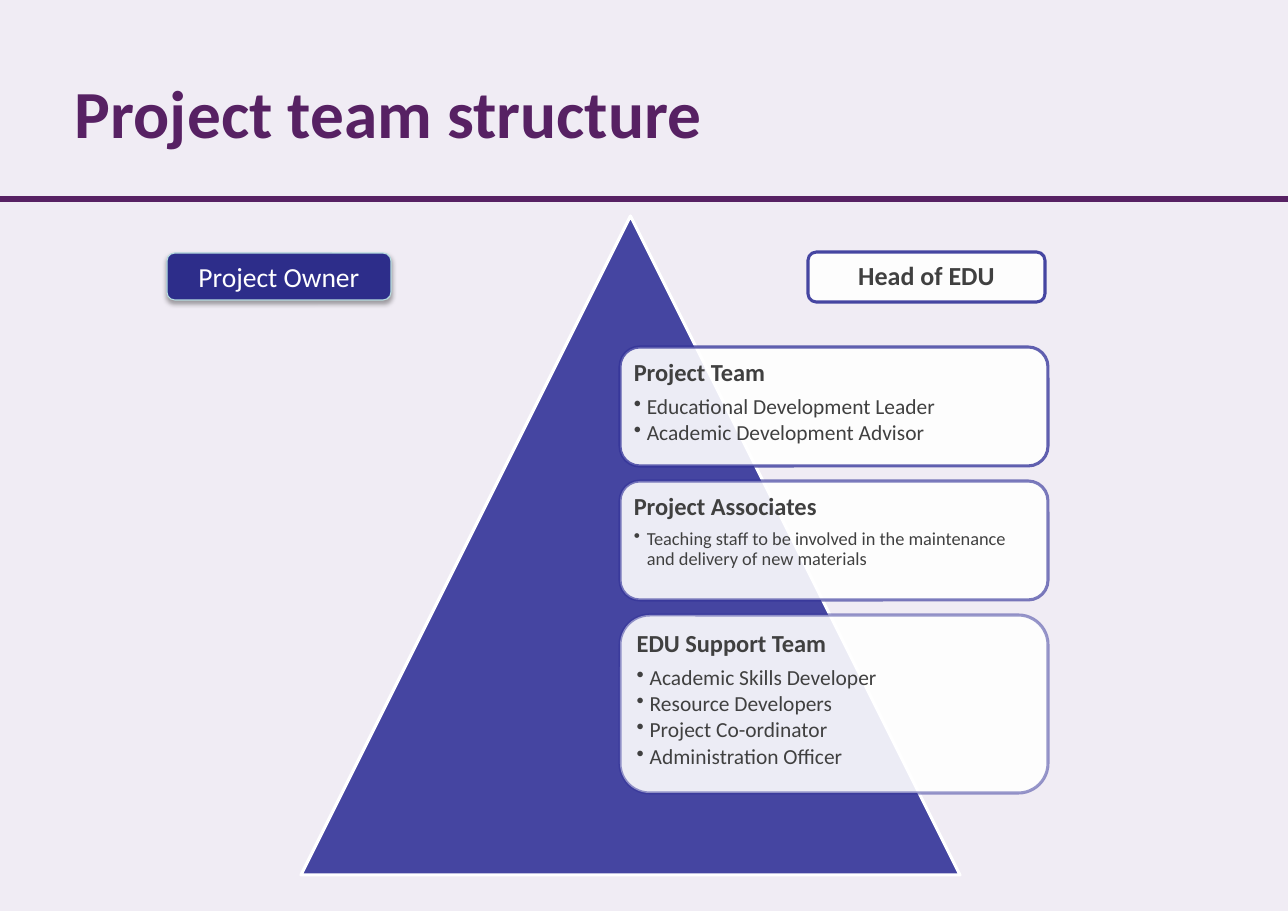
"""Build the project team structure slide."""
from lxml import etree
from pptx import Presentation, util as u
from pptx.dml.color import RGBColor
from pptx.enum import shapes, text
from pptx.oxml.ns import qn

PX = 8298
FONT = "Calibri"
COLORS = {
    "background": "F0ECF4", "title": "572163", "indigo": "333399",
    "owner": "2D2D8A", "owner_line": "B6DCDF", "white": "FFFFFF",
    "body": "404040", "shadow": "000000",
}


def add_box(kind, bounds, fill, line, width, fill_alpha=100, line_alpha=100):
    shape = slide.shapes.add_shape(kind, *[value * PX for value in bounds])
    shape.shadow.inherit = False
    shape.fill.solid()
    shape.line.width = u.Pt(width)
    shape.line.fill.solid()
    for format_, name, alpha in ((shape.fill, fill, fill_alpha),
                                 (shape.line.fill, line, line_alpha)):
        format_.fore_color.rgb = RGBColor.from_string(COLORS[name])
        if alpha < 100:
            color = format_._xPr.find(".//" + qn("a:srgbClr"))
            etree.SubElement(color, qn("a:alpha"), val=str(alpha * 1000))
    frame = shape.text_frame
    frame.word_wrap = True
    frame.margin_left = frame.margin_right = 8 * PX
    frame.margin_top = frame.margin_bottom = 8 * PX
    return shape


def write(paragraph, words, size, color, bold=False, align=text.PP_ALIGN.LEFT):
    paragraph.text = words
    paragraph.alignment = align
    font = paragraph.runs[0].font
    font.name, font.size, font.bold = FONT, u.Pt(size), bold
    font.color.rgb = RGBColor.from_string(COLORS[color])


presentation = Presentation()
presentation.slide_width, presentation.slide_height = 1288 * PX, 911 * PX
slide = presentation.slides.add_slide(presentation.slide_layouts[6])
slide.background.fill.solid()
slide.background.fill.fore_color.rgb = RGBColor.from_string(COLORS["background"])

rule = slide.shapes.add_connector(
    shapes.MSO_CONNECTOR.STRAIGHT, 0, 199 * PX, 1288 * PX, 199 * PX)
rule.line.width = u.Pt(3.5)
rule.line.color.rgb = RGBColor.from_string(COLORS["title"])
etree.SubElement(rule._element.spPr, qn("a:effectLst"))

title = slide.shapes.add_textbox(64 * PX, 36 * PX, 1159 * PX, 152 * PX)
title.text_frame.word_wrap = True
title.text_frame.vertical_anchor = text.MSO_ANCHOR.MIDDLE
write(title.text_frame.paragraphs[0], "Project team structure", 44, "title", True)

add_box(shapes.MSO_SHAPE.ISOSCELES_TRIANGLE, (301, 216, 659, 659),
        "indigo", "white", 2, fill_alpha=90)

ROUNDED = shapes.MSO_SHAPE.ROUNDED_RECTANGLE
head = add_box(ROUNDED, (808, 252, 237, 50), "white", "indigo", 2, 90, 90)
head.text_frame.vertical_anchor = text.MSO_ANCHOR.MIDDLE
write(head.text_frame.paragraphs[0], "Head of EDU", 17, "body", True,
      text.PP_ALIGN.CENTER)
head.text_frame.paragraphs[0].line_spacing = 0.9

teams = [
    ("Project Team", 119, 77, 14,
     ["Educational Development Leader", "Academic Development Advisor"]),
    ("Project Associates", 119, 63, 12,
     ["Teaching staff to be involved in the maintenance and delivery of new materials"]),
    ("EDU Support Team", 178, 50, 14,
     ["Academic Skills Developer", "Resource Developers",
      "Project Co-ordinator", "Administration Officer"]),
]
for row, (heading, height, line_alpha, size, members) in enumerate(teams):
    card = add_box(ROUNDED, (620, 347 + 134 * row, 428, height),
                   "white", "indigo", 2, 90, line_alpha)
    frame = card.text_frame
    frame.vertical_anchor = text.MSO_ANCHOR.TOP
    paragraph = frame.paragraphs[0]
    write(paragraph, heading, 16, "body", True)
    paragraph.line_spacing = 0.9
    paragraph.space_after = u.Pt(16 * 0.35)
    for member in members:
        paragraph = frame.add_paragraph()
        properties = paragraph._p.get_or_add_pPr()
        properties.set("marL", str(13 * PX))
        properties.set("indent", str(-13 * PX))
        etree.SubElement(properties, qn("a:buChar"), char="•")
        write(paragraph, member, size, "body")
        paragraph.line_spacing = 0.9
        paragraph.space_after = u.Pt(size * 0.15)

owner = add_box(ROUNDED, (167, 253, 224, 47), "owner", "owner_line", 0.75)
owner.text_frame.vertical_anchor = text.MSO_ANCHOR.MIDDLE
write(owner.text_frame.paragraphs[0], "Project Owner", 18, "white",
      align=text.PP_ALIGN.CENTER)
effects = owner._element.spPr.find(qn("a:effectLst"))
shadow = etree.SubElement(
    effects, qn("a:outerShdw"), blurRad=str(u.Pt(3.1)), dist=str(u.Pt(1.8)),
    dir="5400000", rotWithShape="0")
shadow_color = etree.SubElement(shadow, qn("a:srgbClr"), val=COLORS["shadow"])
etree.SubElement(shadow_color, qn("a:alpha"), val="35000")

presentation.save("out.pptx")
